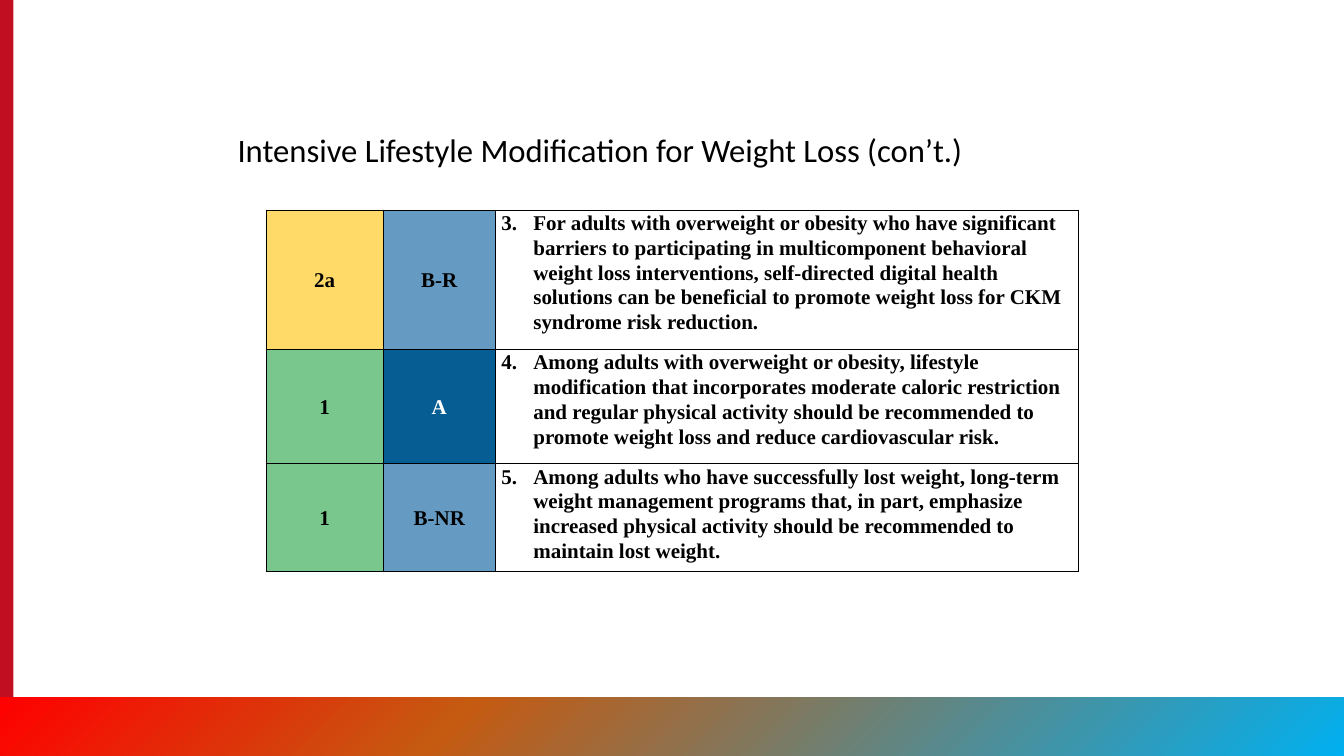
from dataclasses import dataclass

import pptx
import pptx.dml.color
import pptx.enum.shapes
import pptx.enum.text
import pptx.oxml
import pptx.oxml.ns
import pptx.util


@dataclass(frozen=True)
class Theme:
    title_font: str = "Calibri"
    table_font: str = "Times New Roman"
    title_size: int = 28
    table_size: int = 18
    black: str = "000000"
    white: str = "FFFFFF"
    stripe: str = "C10E21"
    moderate: str = "FFDA68"
    strong: str = "79C78D"
    level_a: str = "065D93"
    level_b: str = "659BC2"
    band: tuple[tuple[int, str], ...] = (
        (0, "FF0000"), (34, "C55A11"), (100, "00B0F0"))


@dataclass(frozen=True)
class Grade:
    label: str
    fill: str
    color: str


@dataclass(frozen=True)
class Recommendation:
    number: int
    strength: Grade
    evidence: Grade
    text: str
    height: float


THEME = Theme()
WIDTH, HEIGHT = pptx.util.Inches(16), pptx.util.Inches(9)
COLUMNS, ROWS = 16, 9
STRIPE_WIDTH = 0.16
BAND_TOP = 8.3
TABLE_LEFT, TABLE_TOP = 3.17, 2.5
TABLE_COLUMNS = (1.39, 1.34, 6.94)
CELL_INSET, HANGING = 0.07, 0.38

STRONG = Grade("1", THEME.strong, THEME.black)
RECOMMENDATIONS = (
    Recommendation(
        3, Grade("2a", THEME.moderate, THEME.black),
        Grade("B-R", THEME.level_b, THEME.black),
        "For adults with overweight or obesity who have significant barriers to "
        "participating in multicomponent behavioral weight loss interventions, "
        "self-directed digital health solutions can be beneficial to promote "
        "weight loss for CKM syndrome risk reduction.", 1.66),
    Recommendation(
        4, STRONG, Grade("A", THEME.level_a, THEME.white),
        "Among adults with overweight or obesity, lifestyle modification that "
        "incorporates moderate caloric restriction and regular physical activity "
        "should be recommended to promote weight loss and reduce cardiovascular "
        "risk.", 1.36),
    Recommendation(
        5, STRONG, Grade("B-NR", THEME.level_b, THEME.black),
        "Among adults who have successfully lost weight, long-term weight "
        "management programs that, in part, emphasize increased physical activity "
        "should be recommended to maintain lost weight.", 1.15),
)


def col(n: float) -> int:
    return round(WIDTH * n / COLUMNS)


def row(n: float) -> int:
    return round(HEIGHT * n / ROWS)


def rgb(color: str) -> pptx.dml.color.RGBColor:
    return pptx.dml.color.RGBColor.from_string(color)


def xml(body: str):
    tag, rest = body.split(" ", 1)
    return pptx.oxml.parse_xml(f"<a:{tag} {pptx.oxml.ns.nsdecls('a')} {rest}")


def style_font(p, font: str, size: int, color: str, bold: bool) -> None:
    for r in p.runs:
        r.font.name = font
        r.font.size = pptx.util.Pt(size)
        r.font.color.rgb = rgb(color)
        r.font.bold = bold


def add_bar(s, left: float, top: float, width: float, height: float):
    sp = s.shapes.add_shape(
        pptx.enum.shapes.MSO_SHAPE.RECTANGLE,
        col(left), row(top), col(width), row(height))
    sp.shadow.inherit = False
    sp.line.fill.background()
    return sp


def add_stripe(s) -> None:
    sp = add_bar(s, 0, 0, STRIPE_WIDTH, ROWS)
    sp.fill.solid()
    sp.fill.fore_color.rgb = rgb(THEME.stripe)


def add_band(s) -> None:
    sp = add_bar(s, 0, BAND_TOP, COLUMNS, ROWS - BAND_TOP)
    stops = "".join(
        f'<a:gs pos="{share * 1000}"><a:srgbClr val="{color}"/></a:gs>'
        for share, color in THEME.band)
    sp.fill.gradient()
    gradient = sp._element.spPr.find(pptx.oxml.ns.qn("a:gradFill"))
    gradient.getparent().replace(gradient, xml(
        f'gradFill rotWithShape="1"><a:gsLst>{stops}</a:gsLst>'
        '<a:lin ang="2700000" scaled="0"/></a:gradFill>'))


def add_title(s, text: str) -> None:
    sp = s.shapes.add_textbox(col(2.73), row(1.5), col(10.54), row(0.57))
    tf = sp.text_frame
    tf.word_wrap = True
    tf.auto_size = pptx.enum.text.MSO_AUTO_SIZE.SHAPE_TO_FIT_TEXT
    tf.text = text
    style_font(tf.paragraphs[0], THEME.title_font, THEME.title_size,
               THEME.black, False)


def write_cell(cell, text: str, color: str):
    cell.margin_left = cell.margin_right = col(CELL_INSET)
    cell.margin_top = cell.margin_bottom = 0
    cell.text = text
    p = cell.text_frame.paragraphs[0]
    p.line_spacing = 1.07
    style_font(p, THEME.table_font, THEME.table_size, color, True)
    tcPr = cell._tc.get_or_add_tcPr()
    for i, side in enumerate("LRTB"):
        tcPr.insert(i, xml(
            f'ln{side} w="{pptx.util.Pt(1)}"><a:solidFill>'
            f'<a:srgbClr val="{THEME.black}"/></a:solidFill></a:ln{side}>'))
    return p


def write_grade(cell, grade: Grade) -> None:
    cell.fill.solid()
    cell.fill.fore_color.rgb = rgb(grade.fill)
    cell.vertical_anchor = pptx.enum.text.MSO_ANCHOR.MIDDLE
    p = write_cell(cell, grade.label, grade.color)
    p.alignment = pptx.enum.text.PP_ALIGN.CENTER


def write_advice(cell, item: Recommendation) -> None:
    cell.fill.background()
    p = write_cell(cell, item.text, THEME.black)
    p.space_after = pptx.util.Pt(8)
    pPr = p._p.get_or_add_pPr()
    pPr.set("marL", str(col(HANGING)))
    pPr.set("indent", str(-col(HANGING)))
    pPr.append(xml(f'buAutoNum type="arabicPeriod" startAt="{item.number}"/>'))


def add_recommendations(s, items: tuple[Recommendation, ...]) -> None:
    table = s.shapes.add_table(
        len(items), len(TABLE_COLUMNS), col(TABLE_LEFT), row(TABLE_TOP),
        col(sum(TABLE_COLUMNS)), row(sum(item.height for item in items))).table
    table.first_row = table.horz_banding = False
    for column, width in zip(table.columns, TABLE_COLUMNS):
        column.width = col(width)
    for line, item in zip(table.rows, items):
        line.height = row(item.height)
        strength, evidence, advice = line.cells
        write_grade(strength, item.strength)
        write_grade(evidence, item.evidence)
        write_advice(advice, item)


def main() -> None:
    prs = pptx.Presentation()
    prs.slide_width, prs.slide_height = WIDTH, HEIGHT
    s = prs.slides.add_slide(prs.slide_layouts[6])
    add_stripe(s)
    add_band(s)
    add_title(s, "Intensive Lifestyle Modification for Weight Loss (con’t.)")
    add_recommendations(s, RECOMMENDATIONS)
    prs.save("out.pptx")


if __name__ == "__main__":
    main()
